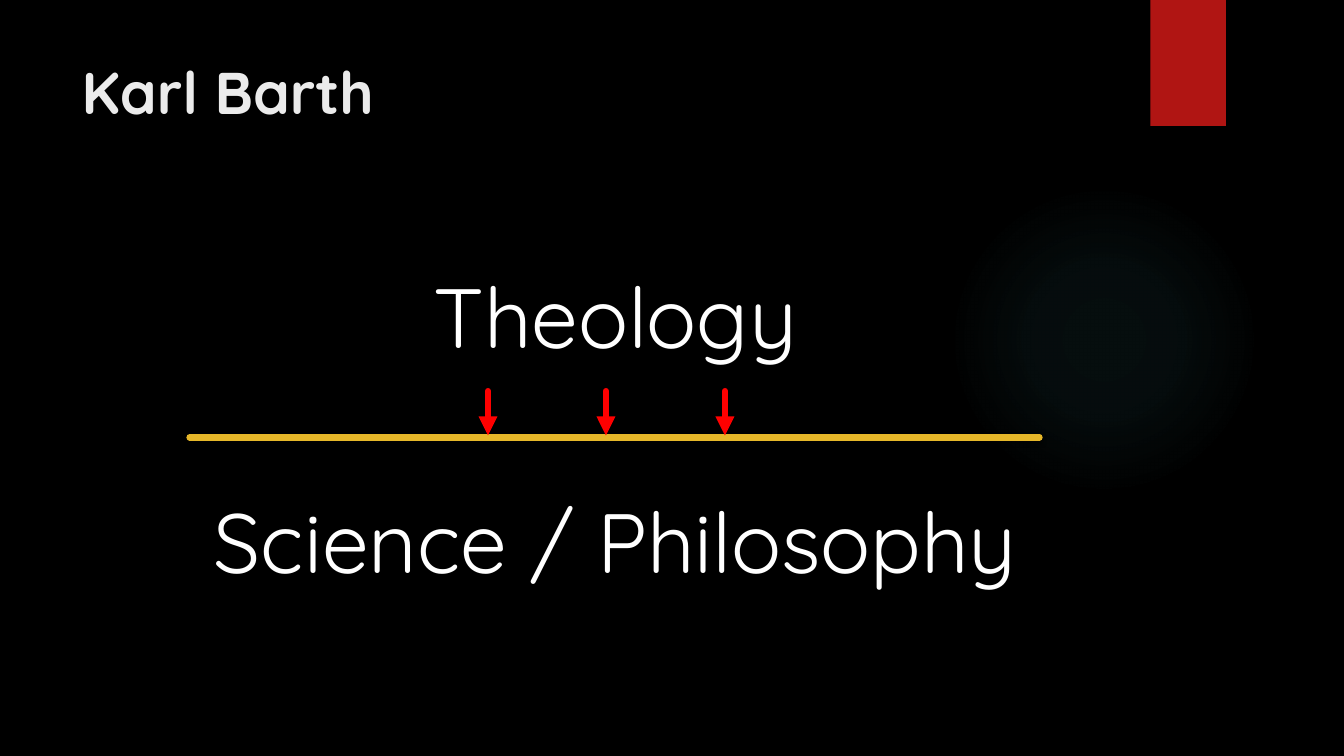
"""Build the Karl Barth slide on theology over science and philosophy."""
from pptx import Presentation
from pptx import util as u
from pptx.dml.color import RGBColor
from pptx.enum import shapes, text
from pptx.oxml import parse_xml
from pptx.oxml.ns import nsdecls, qn


def rgb(code):
    return RGBColor.from_string(code)


def apply(target, values):
    for name, value in values.items():
        setattr(target, name, value)


class Board:
    font = "Quicksand"
    shadow = (f'<a:outerShdw {nsdecls("a")} blurRad="38100" dist="25400" dir="5400000">'
              '<a:srgbClr val="000000"><a:alpha val="45000"/></a:srgbClr></a:outerShdw>')

    def __init__(self, deck, background):
        self.slide = deck.slides.add_slide(deck.slide_layouts[1])
        fill = self.slide.background.fill
        fill.solid()
        fill.fore_color.rgb = rgb(background)

    def block(self, preset, box, color):
        block = self.slide.shapes.add_shape(preset, *map(u.Inches, box))
        block.shadow.inherit = False
        block.fill.solid()
        block.fill.fore_color.rgb = rgb(color)
        block.line.fill.background()
        return block

    def glow(self, box, color, stops):
        props = self.block(shapes.MSO_SHAPE.OVAL, box, color)._element.spPr
        steps = "".join(
            f'<a:gs pos="{place * 1000}"><a:srgbClr val="{color}">'
            f'<a:alpha val="{alpha * 1000}"/></a:srgbClr></a:gs>'
            for place, alpha in stops)
        props.replace(props.find(qn("a:solidFill")), parse_xml(
            f'<a:gradFill {nsdecls("a")}><a:gsLst>{steps}</a:gsLst><a:path path="circle">'
            '<a:fillToRect l="50000" t="50000" r="50000" b="50000"/></a:path></a:gradFill>'))

    def ribbon(self, box, color):
        ribbon = self.block(shapes.MSO_SHAPE.RECTANGLE, box, color)
        ribbon._element.spPr.find(qn("a:effectLst")).append(parse_xml(self.shadow))

    def words(self, index, box, lines, gap=0, align=text.PP_ALIGN.LEFT, **style):
        holder = self.slide.placeholders[index]
        apply(holder, dict(zip(("left", "top", "width", "height"), map(u.Inches, box))))
        self.slide.shapes._spTree.append(holder._element)
        frame = holder.text_frame
        frame.text = "\n".join(lines)
        apply(frame, {"word_wrap": True, "auto_size": text.MSO_AUTO_SIZE.NONE,
                      "vertical_anchor": text.MSO_ANCHOR.TOP})
        color = style.pop("color")
        for number, paragraph in enumerate(frame.paragraphs):
            props = paragraph._p.get_or_add_pPr()
            props.set("marL", "0")
            props.set("indent", "0")
            props.append(parse_xml(f'<a:buNone {nsdecls("a")}/>'))
            apply(paragraph, {"alignment": align, "space_before": u.Pt(gap if number else 0)})
            for run in paragraph.runs:
                apply(run.font, {"name": self.font, **style})
                run.font.color.rgb = rgb(color)

    def line(self, start, end, color, arrow=False, shadow=False):
        line = self.slide.shapes.add_connector(
            shapes.MSO_CONNECTOR.STRAIGHT, *map(u.Inches, start + end))
        line.line.width = u.Pt(4.5)
        line.line.color.rgb = rgb(color)
        props = line._element.spPr
        stroke = props.find(qn("a:ln"))
        stroke.set("cap", "rnd")
        if arrow:
            stroke.append(parse_xml(f'<a:headEnd {nsdecls("a")} type="triangle"/>'))
        effects = parse_xml(f'<a:effectLst {nsdecls("a")}/>')
        if shadow:
            effects.append(parse_xml(self.shadow))
        props.append(effects)


def main():
    deck = Presentation()
    apply(deck, {"slide_width": u.Inches(13.33), "slide_height": u.Inches(7.5)})
    board = Board(deck, "000000")
    board.glow((9.41, 1.83, 3.08, 3.08), "50B9C1", ((0, 7), (36, 6), (69, 0)))
    board.ribbon((11.41, 0, 0.75, 1.25), "B01513")
    board.words(0, (0.71, 0.5, 10.29, 1.53), ["Karl Barth"],
                color="EBEBEB", size=u.Pt(42), bold=True)
    board.words(1, (1.21, 2.57, 9.78, 4.59), ["Theology", "Science / Philosophy"],
                gap=89, align=text.PP_ALIGN.CENTER, color="FFFFFF", size=u.Pt(60))
    board.line((1.88, 4.34), (10.31, 4.34), "E6B729", shadow=True)
    for x in (4.84, 6.01, 7.19):
        board.line((x, 4.32), (x, 3.88), "FF0000", arrow=True)
    deck.save("out.pptx")


if __name__ == "__main__":
    main()
